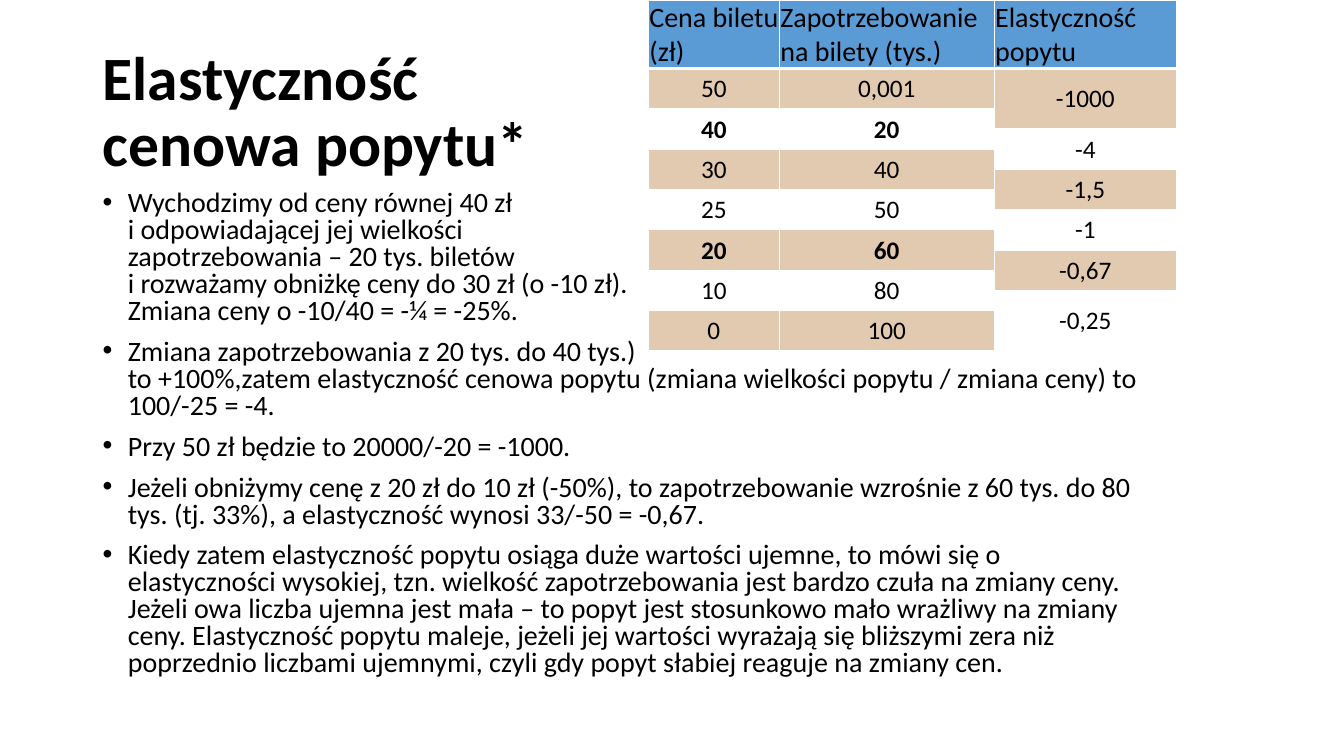
import pptx
import pptx.dml.color
import pptx.enum.text
import pptx.oxml
import pptx.oxml.ns
import pptx.util
from lxml import etree

COLORS = {"text": "000000", "header": "5B9BD5", "band": "E2CAB0", "plain": "FFFFFF"}
FONT = "Calibri"
ALIGN = pptx.enum.text.PP_ALIGN
ANCHOR = pptx.enum.text.MSO_ANCHOR

TITLE = "Elastyczność\ncenowa popytu*"
BULLETS = [
    "Wychodzimy od ceny równej 40 zł\ni odpowiadającej jej wielkości\n"
    "zapotrzebowania – 20 tys. biletów\n"
    "i rozważamy obniżkę ceny do 30 zł (o -10 zł).\n"
    "Zmiana ceny o -10/40 = -¼ = -25%.",
    "Zmiana zapotrzebowania z 20 tys. do 40 tys.)\n"
    "to +100%,zatem elastyczność cenowa popytu "
    "(zmiana wielkości popytu / zmiana ceny) to 100/-25 = -4.",
    "Przy 50 zł będzie to 20000/-20 = -1000.",
    "Jeżeli obniżymy cenę z 20 zł do 10 zł (-50%), to zapotrzebowanie wzrośnie "
    "z 60 tys. do 80 tys. (tj. 33%), a elastyczność wynosi 33/-50 = -0,67.",
    "Kiedy zatem elastyczność popytu osiąga duże wartości ujemne, to mówi się o "
    "elastyczności wysokiej, tzn. wielkość zapotrzebowania jest bardzo czuła na "
    "zmiany ceny. Jeżeli owa liczba ujemna jest mała – to popyt jest stosunkowo "
    "mało wrażliwy na zmiany ceny. Elastyczność popytu maleje, jeżeli jej wartości "
    "wyrażają się bliższymi zera niż poprzednio liczbami ujemnymi, czyli gdy popyt "
    "słabiej reaguje na zmiany cen.",
]
HEADERS = ["Cena biletu (zł)", "Zapotrzebowanie\nna bilety (tys.)", "Elastyczność popytu"]
DEMAND = [("50", "0,001"), ("40", "20"), ("30", "40"), ("25", "50"),
          ("20", "60"), ("10", "80"), ("0", "100")]
ELASTICITY = ["-1000", "-4", "-1,5", "-1", "-0,67", "-0,25"]
BOLD_PRICES = {"40", "20"}


class Page:
    """One slide on a grid of 100 columns by 100 rows."""

    def __init__(self, deck):
        self.column = deck.slide_width / 100
        self.row = deck.slide_height / 100
        self.slide = deck.slides.add_slide(deck.slide_layouts[6])

    def place(self, left, top, width, height):
        return [int(left * self.column), int(top * self.row),
                int(width * self.column), int(height * self.row)]

    def style_text(self, para, text, size, bold=False, align=ALIGN.LEFT):
        para.text = text
        para.alignment = align
        for span in para.runs:
            span.font.name = FONT
            span.font.size = pptx.util.Pt(size)
            span.font.bold = bold
            span.font.color.rgb = pptx.dml.color.RGBColor.from_string(COLORS["text"])

    def text(self, area, texts, size, spacing, bold=False, anchor=ANCHOR.TOP, bullets=False):
        frame = self.slide.shapes.add_textbox(*self.place(*area)).text_frame
        frame.word_wrap = True
        frame.vertical_anchor = anchor
        for index, text in enumerate(texts):
            para = frame.add_paragraph() if index else frame.paragraphs[0]
            self.style_text(para, text, size, bold)
            para.line_spacing = spacing
            if bullets:
                para.space_before = pptx.util.Pt(10)
                self.bullet(para)

    def bullet(self, para):
        indent = pptx.util.Inches(0.25)
        properties = para._p.get_or_add_pPr()
        properties.set("marL", str(indent))
        properties.set("indent", str(-indent))
        for tag, name, value in (("a:buFont", "typeface", "Arial"), ("a:buChar", "char", "•")):
            etree.SubElement(properties, pptx.oxml.ns.qn(tag)).set(name, value)

    def table(self, left, top, widths, heights):
        area = self.place(left, top, sum(widths), sum(heights))
        grid = self.slide.shapes.add_table(len(heights), len(widths), *area).table
        for column, width in zip(grid.columns, widths):
            column.width = int(width * self.column)
        for row, height in zip(grid.rows, heights):
            row.height = int(height * self.row)
        for cell in grid.iter_cells():
            cell.margin_left = cell.margin_right = cell.margin_top = pptx.util.Inches(0.01)
            cell.margin_bottom = 0
            cell.vertical_anchor = ANCHOR.MIDDLE
        return grid

    def cell(self, grid, row, column, text, size, fill, span=1, bold=False, align=ALIGN.CENTER):
        start = grid.cell(row, column)
        if span > 1:
            start.merge(grid.cell(row + span - 1, column))
        self.style_text(start.text_frame.paragraphs[0], text, size, bold, align)
        for part in range(row, row + span):
            cell = grid.cell(part, column)
            self.borders(cell, {"T": 3 if part == 1 else 1, "B": 1 if part else 3})
            cell.fill.solid()
            cell.fill.fore_color.rgb = pptx.dml.color.RGBColor.from_string(COLORS[fill])

    def borders(self, cell, widths):
        properties = cell._tc.get_or_add_tcPr()
        for side in "LRTB":
            width = pptx.util.Pt(widths.get(side, 1))
            properties.append(pptx.oxml.parse_xml(
                f'<a:ln{side} {pptx.oxml.ns.nsdecls("a")} w="{width}"><a:solidFill>'
                f'<a:srgbClr val="{COLORS["plain"]}"/></a:solidFill></a:ln{side}>'))


def main():
    deck = pptx.Presentation()
    deck.slide_width = pptx.util.Inches(13.33)
    deck.slide_height = pptx.util.Inches(7.5)
    page = Page(deck)

    # Title and explanation
    page.text((6.9, 5.33, 86.25, 19.33), [TITLE], 44, 0.9, bold=True, anchor=ANCHOR.MIDDLE)
    page.text((6.9, 24.67, 79.15, 70), BULLETS, 20, 0.8, bullets=True)

    # Table: each elasticity sits between two neighbouring prices
    half = 2.67
    heights = [9.07, 2 * half] + [half] * 10 + [2 * half]
    grid = page.table(48.24, 0, [9.75, 15.98, 13.58], heights)
    for column, header in enumerate(HEADERS):
        page.cell(grid, 0, column, header, 20, "header", align=ALIGN.LEFT)
    fills = ("band", "plain")
    for index, pair in enumerate(DEMAND):
        row = max(1, 2 * index)
        span = 1 if index in (0, len(DEMAND) - 1) else 2
        for column, value in enumerate(pair):
            page.cell(grid, row, column, value, 18, fills[index % 2], span,
                      bold=pair[0] in BOLD_PRICES)
    for index, value in enumerate(ELASTICITY):
        page.cell(grid, 2 * index + 1, 2, value, 18, fills[index % 2], span=2)

    deck.save("out.pptx")


if __name__ == "__main__":
    main()
